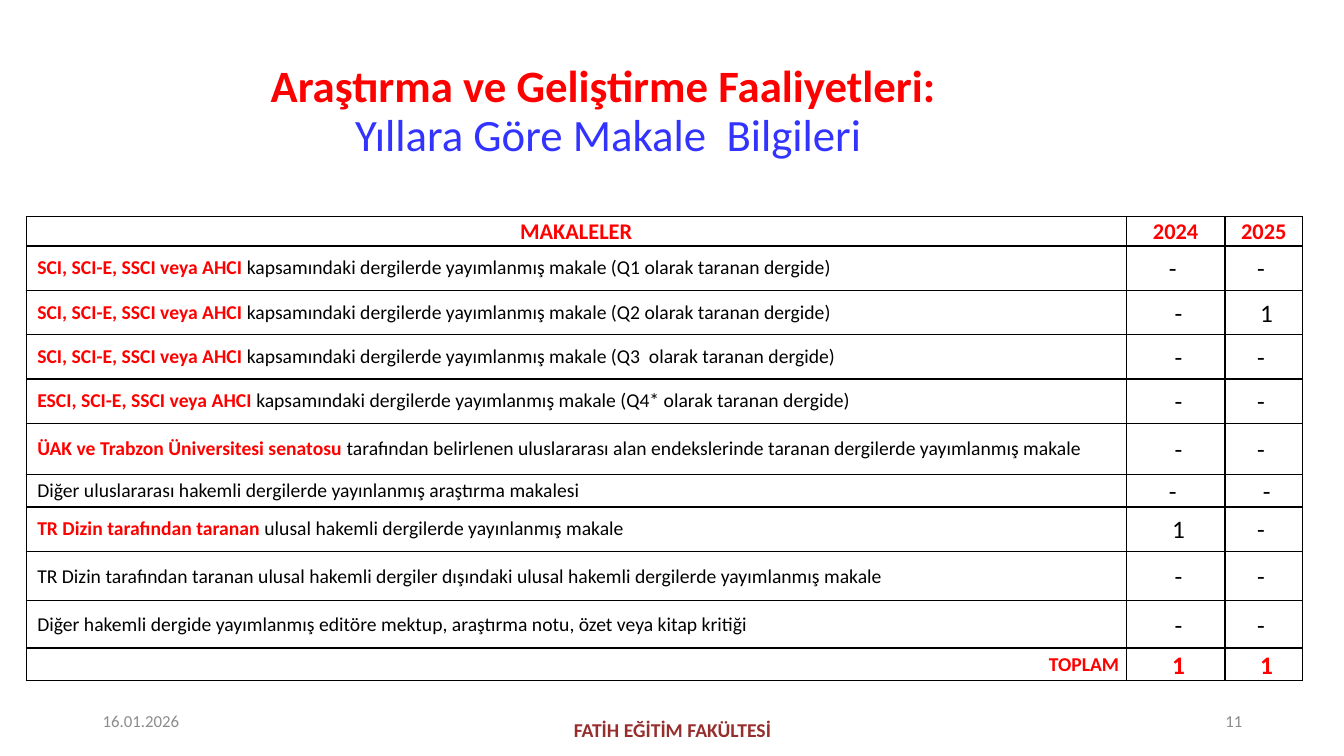
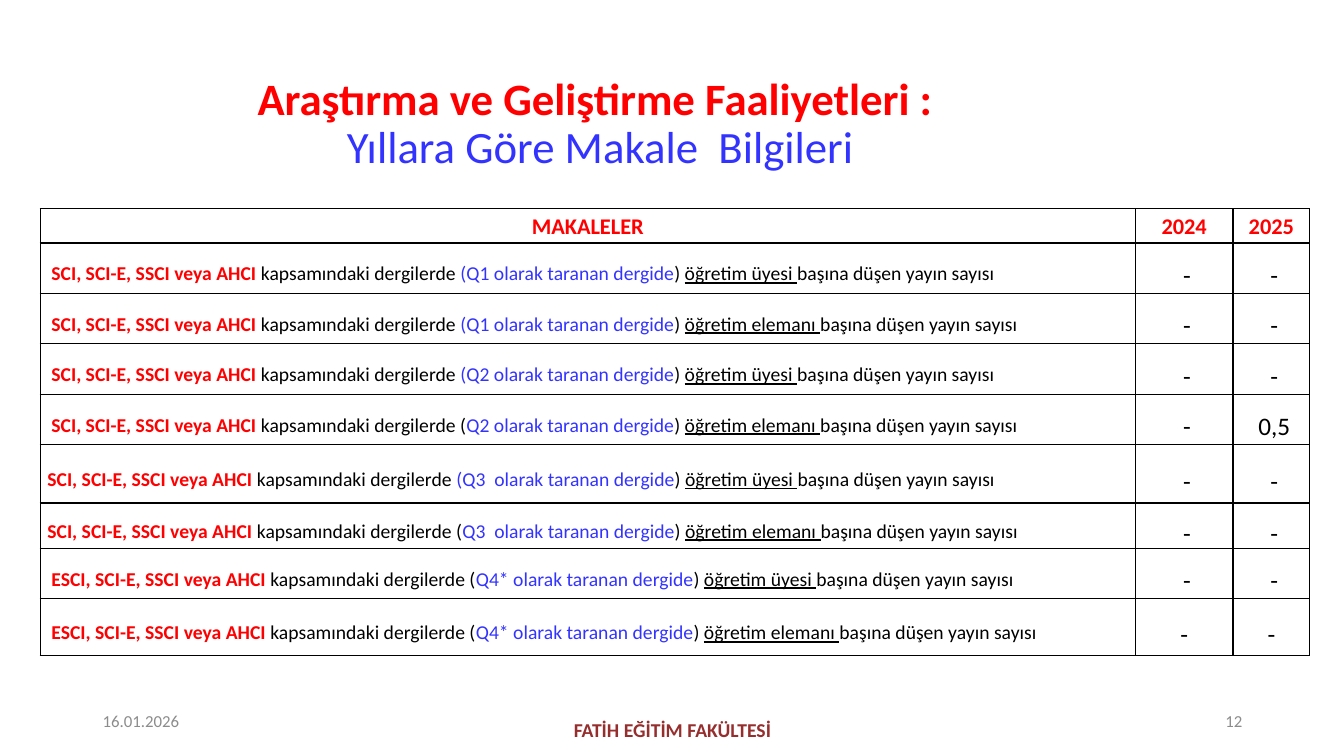
import pptx
import pptx.util
import pptx.dml.color
import pptx.enum.text
import pptx.oxml
import pptx.oxml.ns

Inches, Pt = pptx.util.Inches, pptx.util.Pt
RGBColor = pptx.dml.color.RGBColor
PP_ALIGN = pptx.enum.text.PP_ALIGN
MIDDLE = pptx.enum.text.MSO_ANCHOR.MIDDLE

RED = RGBColor(0xFF, 0x00, 0x00)
BLUE = RGBColor(0x33, 0x33, 0xFF)
BLACK = RGBColor(0x00, 0x00, 0x00)
MAROON = RGBColor(0x96, 0x2E, 0x2E)
GRAY = RGBColor(0x8C, 0x8C, 0x8C)
BOLD_COLORS = (RED, MAROON)
FONT = "Calibri"

FACULTY = "FATİH EĞİTİM FAKÜLTESİ"
DATE = "16.01.2026"
SUBTITLE = "Yıllara Göre Makale  Bilgileri"
HEADINGS = ("MAKALELER", "2024", "2025")
SCI = "SCI, SCI-E, SSCI veya AHCI "
ESCI = "E" + SCI
PUBLISHED = "kapsamındaki dergilerde yayımlanmış makale "

ARTICLES = [
    (0.44, 1, SCI, PUBLISHED + "(Q1 olarak taranan dergide)", "- ", "- "),
    (0.44, 1, SCI, PUBLISHED + "(Q2 olarak taranan dergide)", " -", " 1"),
    (0.44, 1, SCI, PUBLISHED + "(Q3  olarak taranan dergide)", " -", "- "),
    (0.44, 1, ESCI, PUBLISHED + "(Q4* olarak taranan dergide)", " -", "- "),
    (0.51, 1, "ÜAK ve Trabzon Üniversitesi senatosu ",
     "tarafından belirlenen uluslararası alan endekslerinde taranan dergilerde yayımlanmış makale",
     " -", "- "),
    (0.24, 1, "", "Diğer uluslararası hakemli dergilerde yayınlanmış araştırma makalesi",
     "- ", " -"),
    (0.44, 1, "TR Dizin tarafından taranan ", "ulusal hakemli dergilerde yayınlanmış makale",
     " 1", "- "),
    (0.49, 1.07, "", "TR Dizin tarafından taranan ulusal hakemli dergiler dışındaki "
     "ulusal hakemli dergilerde yayımlanmış makale", " -", "- "),
    (0.47, 1.07, "", "Diğer hakemli dergide yayımlanmış editöre mektup, araştırma notu, "
     "özet veya kitap kritiği", " -", "- "),
]
TOTAL = (0.26, "TOPLAM", " 1", " 1")

MEMBER, STAFF = "öğretim üyesi ", "öğretim elemanı "
PER_PERSON = [
    (0.5, 0.04, SCI, "", "(Q1", MEMBER, " -", " -"),
    (0.5, 0.04, SCI, "", "(Q1", STAFF, " -", " -"),
    (0.5, 0.04, SCI, "", "(Q2", MEMBER, " -", " -"),
    (0.5, 0.04, SCI, "(", "Q2", STAFF, " -", " 0,5"),
    (0.58, 0, SCI, "", "(Q3 ", MEMBER, " -", " -"),
    (0.41, 0, SCI, "(", "Q3 ", STAFF, " -", " -"),
    (0.5, 0.04, ESCI, "(", "Q4*", MEMBER, " -", " -"),
    (0.56, 0.04, ESCI, "(", "Q4*", STAFF, "-", "-"),
]


def add_run(p, text, size, color, underline=False):
    r = p.add_run()
    r.text = text
    r.font.name = FONT
    r.font.size = Pt(size)
    r.font.color.rgb = color
    r.font.bold = color in BOLD_COLORS
    r.font.underline = underline


def add_text(s, box, size, align, *runs):
    tf = s.shapes.add_textbox(*map(Inches, box)).text_frame
    tf.word_wrap = True
    tf.vertical_anchor = MIDDLE
    p = tf.paragraphs[0]
    p.alignment = align
    for i, (text, color) in enumerate(runs):
        if i:
            p.add_line_break()
        add_run(p, text, size, color)
    return p


def add_slide(prs, number, title, title_box):
    s = prs.slides.add_slide(prs.slide_layouts[6])
    add_text(s, (4.42, 7.04, 4.5, 0.4), 14, PP_ALIGN.CENTER, (FACULTY, MAROON))
    p = add_text(s, title_box, 32, PP_ALIGN.CENTER, (title, RED), (SUBTITLE, BLUE))
    p.line_spacing = 0.9
    add_text(s, (0.92, 6.95, 3, 0.4), 12, PP_ALIGN.LEFT, (DATE, GRAY))
    add_text(s, (9.42, 6.95, 3, 0.4), 12, PP_ALIGN.RIGHT, (number, GRAY))
    return s


def fill_cell(cell, runs, size, align, spacing, indent=0):
    cell.margin_left = cell.margin_right = Inches(0.07)
    cell.margin_top = cell.margin_bottom = 0
    cell.vertical_anchor = MIDDLE
    tc_pr = cell._tc.get_or_add_tcPr()
    for side in "LRTB":
        tc_pr.append(pptx.oxml.parse_xml(
            f'<a:ln{side} {pptx.oxml.ns.nsdecls("a")} w="{Pt(1)}"><a:solidFill>'
            f'<a:srgbClr val="{BLACK}"/></a:solidFill></a:ln{side}>'))
    cell.fill.background()
    p = cell.text_frame.paragraphs[0]
    p.alignment = align
    p.line_spacing = float(spacing)
    p._p.get_or_add_pPr().set("marL", str(Inches(indent)))
    for run in runs:
        add_run(p, run[0], size, *run[1:])


def label_cell(runs, spacing, indent=0.04, align=PP_ALIGN.LEFT):
    return runs, 14, align, spacing, indent


def centred_cells(texts, size, color, spacing):
    return [([(text, color)], size, PP_ALIGN.CENTER, spacing) for text in texts]


def article_rows():
    for height, spacing, lead, rest, *values in ARTICLES:
        runs = [run for run in ((lead, RED), (rest, BLACK)) if run[0]]
        yield height, [label_cell(runs, spacing), *centred_cells(values, 18, BLACK, 1.07)]
    height, label, *values = TOTAL
    yield height, [label_cell([(label, RED)], 1.07, 0, PP_ALIGN.RIGHT),
                   *centred_cells(values, 18, RED, 1.07)]


def per_person_rows():
    for height, indent, index, bracket, quartile, people, *values in PER_PERSON:
        runs = [(index, RED), ("kapsamındaki dergilerde " + bracket, BLACK),
                (quartile + " olarak taranan dergide", BLUE), (") ", BLACK),
                (people, BLACK, True), ("başına düşen yayın sayısı", BLACK)]
        yield height, [label_cell(runs, 1.5, indent), *centred_cells(values, 18, BLACK, 1.5)]


def add_grid(s, left, top, widths, heading_height, body):
    rows = [(heading_height, centred_cells(HEADINGS, 16, RED, 1.07)), *body]
    height = sum(row[0] for row in rows)
    table = s.shapes.add_table(len(rows), len(widths), Inches(left), Inches(top),
                               Inches(sum(widths)), Inches(height)).table
    table.first_row = table.horz_banding = False
    for column, width in zip(table.columns, widths):
        column.width = Inches(width)
    for row, (height, cells) in zip(table.rows, rows):
        row.height = Inches(height)
        for cell, content in zip(row.cells, cells):
            fill_cell(cell, *content)


def main():
    prs = pptx.Presentation()
    prs.slide_width, prs.slide_height = Inches(13.33), Inches(7.5)
    s = add_slide(prs, "11", "Araştırma ve Geliştirme Faaliyetleri: ", (0.26, 0.69, 11.55, 0.85))
    add_grid(s, 0.26, 2.15, (10.91, 0.98, 0.77), 0.29, article_rows())
    s = add_slide(prs, "12", "Araştırma ve Geliştirme Faaliyetleri : ", (0.26, 0.9, 11.39, 0.68))
    add_grid(s, 0.4, 2.07, (10.86, 0.97, 0.76), 0.34, per_person_rows())
    prs.save("out.pptx")


if __name__ == "__main__":
    main()
